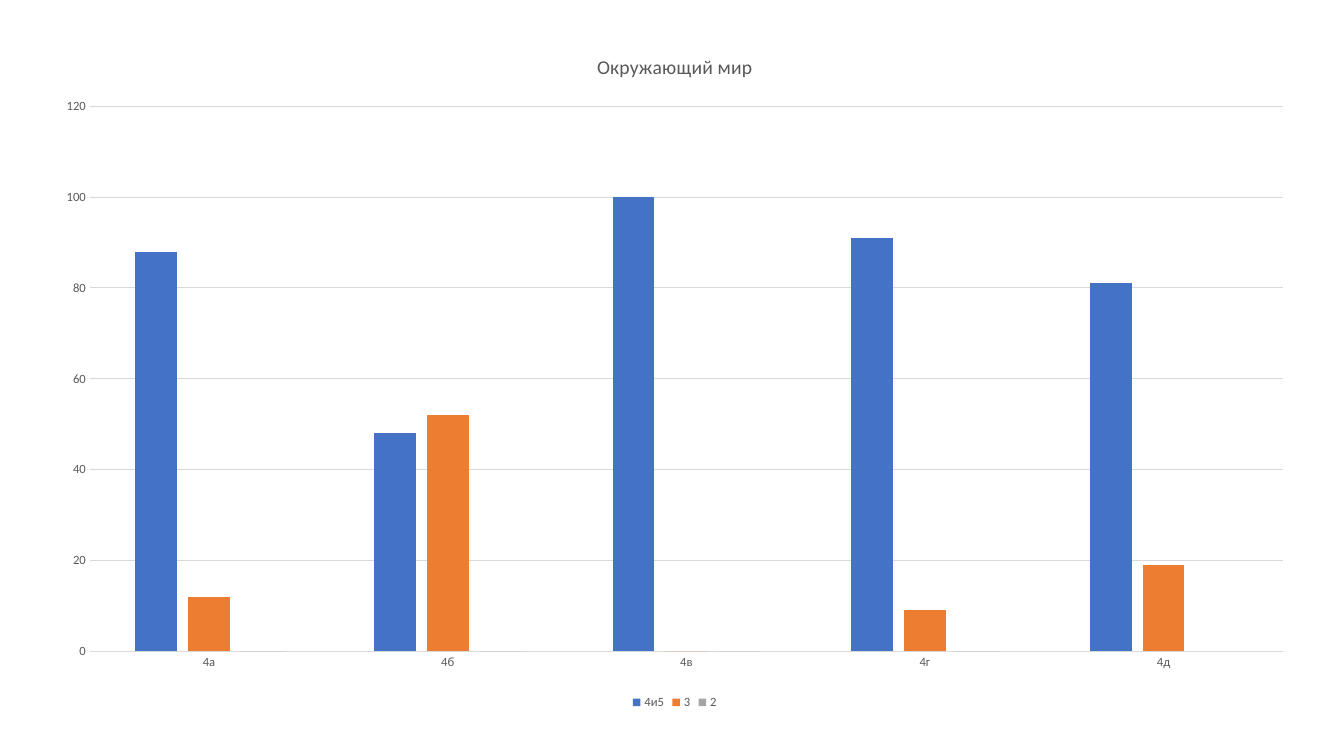
from pptx import Presentation
from pptx.chart.data import CategoryChartData
from pptx.dml.color import RGBColor
from pptx.enum.chart import XL_CHART_TYPE, XL_LEGEND_POSITION, XL_TICK_MARK
from pptx.util import Pt

THEME = {
    "face": "Calibri",
    "text": RGBColor.from_string("595959"),
    "rule": RGBColor.from_string("D9D9D9"),
    "title": Pt(14),
    "base": Pt(10),
    "label": Pt(9),
    "line": Pt(0.75),
}

# Share of marks per class: name, values, colour
MARKS = [
    ("4и5", (88, 48, 100, 91, 81), "4472C4"),
    ("3", (12, 52, 0, 9, 19), "ED7D31"),
    ("2", (0, 0, 0, 0, None), "A5A5A5"),
]


def apply(item, style):
    for name, value in style.items():
        setattr(item, name, value)


def style_font(font, size):
    apply(font, {"name": THEME["face"], "size": size, "bold": False})
    font.color.rgb = THEME["text"]


# Slide
deck = Presentation()
apply(deck, {"slide_width": Pt(960), "slide_height": Pt(540)})
slide = deck.slides.add_slide(deck.slide_layouts[6])

# Chart
data = CategoryChartData()
data.categories = ["4а", "4б", "4в", "4г", "4д"]
for name, values, _ in MARKS:
    data.add_series(name, values)
chart = slide.shapes.add_chart(
    XL_CHART_TYPE.COLUMN_CLUSTERED, Pt(29.5), Pt(21.6), Pt(905), Pt(488.2), data
).chart
style_font(chart.font, THEME["base"])

# Title
chart.has_title = True
title = chart.chart_title
title.include_in_layout = False
title.text_frame.text = "Окружающий мир"
style_font(title.text_frame.paragraphs[0].runs[0].font, THEME["title"])

# Columns
plot = chart.plots[0]
apply(plot, {"gap_width": 219, "overlap": -27, "vary_by_categories": False})
for series, (_, _, color) in zip(plot.series, MARKS):
    series.invert_if_negative = False
    series.format.fill.solid()
    series.format.fill.fore_color.rgb = RGBColor.from_string(color)

# Axes
for axis in (chart.category_axis, chart.value_axis):
    apply(axis, {"major_tick_mark": XL_TICK_MARK.NONE,
                 "minor_tick_mark": XL_TICK_MARK.NONE})
    style_font(axis.tick_labels.font, THEME["label"])
apply(chart.value_axis, {"minimum_scale": 0, "maximum_scale": 120,
                         "major_unit": 20, "has_major_gridlines": True})
chart.value_axis.format.line.fill.background()
for part in (chart.category_axis, chart.value_axis.major_gridlines):
    part.format.line.width = THEME["line"]
    part.format.line.color.rgb = THEME["rule"]

# Legend
chart.has_legend = True
apply(chart.legend, {"position": XL_LEGEND_POSITION.BOTTOM,
                     "include_in_layout": False})
style_font(chart.legend.font, THEME["label"])

deck.save("out.pptx")
